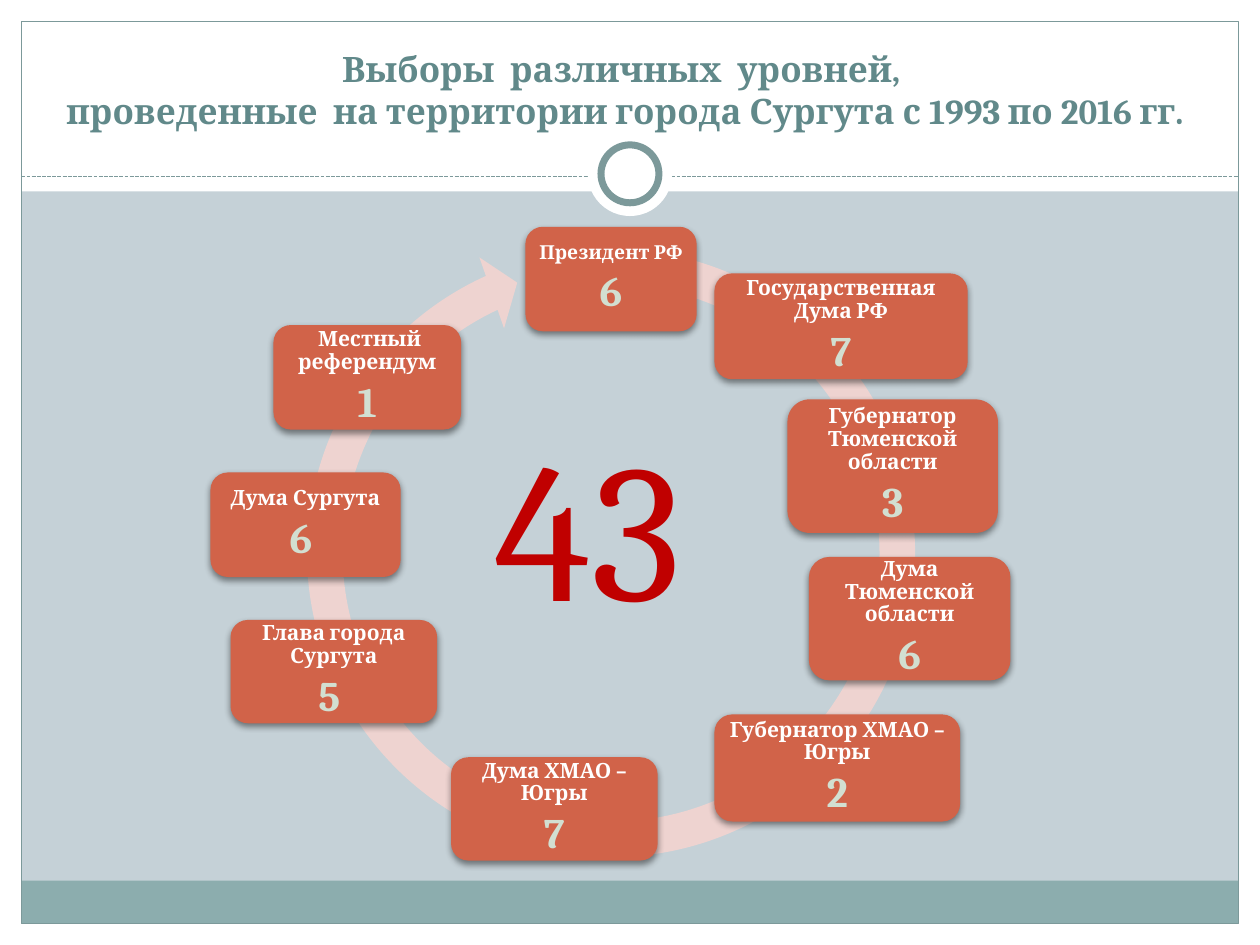
import pptx
import pptx.util
import pptx.dml.color
import pptx.enum.dml
import pptx.enum.shapes
import pptx.enum.text
import pptx.oxml
import pptx.oxml.ns
from lxml import etree

Inches, Pt = pptx.util.Inches, pptx.util.Pt
SHAPES = pptx.enum.shapes.MSO_SHAPE
ALIGN = pptx.enum.text.PP_ALIGN
ANCHOR = pptx.enum.text.MSO_ANCHOR
qn = pptx.oxml.ns.qn

FONT = "Cambria"
COLORS = {
    "background": "C5D1D7", "white": "FFFFFF", "footer": "8CADAE",
    "frame": "7C999A", "title": "61898A", "arrow": "EED3D0",
    "card": "D16349", "count": "D2DFD1", "total": "C00000",
}
WIDTH, HEIGHT, MARGIN = 10, 7.5, 0.17

# label, count, label size, box (left, top, width, height)
CARDS = [
    ("Президент РФ", "6", 11, (4.17, 1.8, 1.36, 0.83)),
    ("Губернатор Тюменской области", "3", 12, (6.25, 3.17, 1.67, 1.06)),
    ("Губернатор ХМАО – Югры", "2", 12, (5.67, 5.67, 1.95, 0.85)),
    ("Глава города Сургута", "5 ", 12, (1.83, 4.92, 1.64, 0.82)),
    ("Государственная Дума РФ", "7", 12, (5.67, 2.17, 2.01, 0.84)),
    ("Дума Тюменской области", "6", 12, (6.42, 4.42, 1.6, 0.98)),
    ("Дума ХМАО – Югры", "7", 12, (3.58, 6.01, 1.64, 0.82)),
    ("Дума Сургута", "6 ", 12, (1.67, 3.75, 1.51, 0.83)),
    (" Местный референдум", "1", 12, (2.17, 2.58, 1.49, 0.83)),
]


def color(name):
    return pptx.dml.color.RGBColor.from_string(COLORS[name])


def add_shape(slide, kind, box, fill=None, line=None, line_width=0.75):
    shape = slide.shapes.add_shape(kind, *map(Inches, box))
    shape.shadow.inherit = False
    if fill:
        shape.fill.solid()
        shape.fill.fore_color.rgb = color(fill)
    else:
        shape.fill.background()
    if line:
        shape.line.color.rgb = color(line)
        shape.line.width = Pt(line_width)
    else:
        shape.line.fill.background()
    return shape


def write(paragraph, text, size, fill, bold=False, align=ALIGN.LEFT,
          line_spacing=None, after_percent=None):
    paragraph.text = text
    paragraph.alignment = align
    paragraph.font.size = Pt(size)
    for run in paragraph.runs:
        run.font.name = FONT
        run.font.size = Pt(size)
        run.font.bold = bold
        run.font.color.rgb = color(fill)
    if line_spacing:
        paragraph.line_spacing = line_spacing
    if after_percent:
        paragraph.space_after = Pt(0)
        spacing = paragraph._p.pPr.find(qn("a:spcAft"))
        spacing.remove(spacing[0])
        etree.SubElement(spacing, qn("a:spcPct"), val=str(after_percent * 1000))


def add_text_box(slide, box, text, anchor=ANCHOR.TOP, **text_format):
    frame = slide.shapes.add_textbox(*map(Inches, box)).text_frame
    frame.word_wrap = True
    frame.vertical_anchor = anchor
    write(frame.paragraphs[0], text, **text_format)


def add_soft_shadow(shape):
    effects = shape._element.spPr.find(qn("a:effectLst"))
    shadow = etree.SubElement(
        effects, qn("a:outerShdw"), blurRad=str(Pt(4)), dist=str(Pt(2)),
        dir="5400000", algn="ctr", rotWithShape="0")
    tone = etree.SubElement(shadow, qn("a:srgbClr"), val="000000")
    etree.SubElement(tone, qn("a:alpha"), val="45000")


def add_frame(slide, width, height):
    header = 1.52
    for box in [(0, height - MARGIN, width, MARGIN), (0, 0, width, header),
                (0, 0, MARGIN, height), (width - MARGIN, 0, MARGIN, height)]:
        add_shape(slide, SHAPES.RECTANGLE, box, "white")
    inner = width - 2 * MARGIN
    add_shape(slide, SHAPES.RECTANGLE, (MARGIN, 6.99, inner, 0.34), "footer")
    add_shape(slide, SHAPES.RECTANGLE,
              (MARGIN, MARGIN, inner, height - 2 * MARGIN), line="frame")

    divider = slide.shapes.add_connector(
        pptx.enum.shapes.MSO_CONNECTOR.STRAIGHT,
        *map(Inches, (MARGIN, 1.4, width - MARGIN, 1.4)))
    divider.line.color.rgb = color("frame")
    divider.line.width = Pt(0.75)
    divider.line.dash_style = pptx.enum.dml.MSO_LINE.SQUARE_DOT
    divider_properties = divider._element.spPr
    etree.SubElement(divider_properties, qn("a:effectLst"))

    for diameter, line in [(0.67, None), (0.46, "frame")]:
        box = (width / 2 - diameter / 2, 1.38 - diameter / 2, diameter, diameter)
        add_shape(slide, SHAPES.OVAL, box, "white", line, 4)


def add_card(slide, box, label, count, label_size):
    card = add_shape(slide, SHAPES.ROUNDED_RECTANGLE, box, "card")
    add_soft_shadow(card)
    frame = card.text_frame
    frame.word_wrap = True
    frame.vertical_anchor = ANCHOR.MIDDLE
    frame.margin_left = frame.margin_right = Inches(0.05)
    frame.margin_top = frame.margin_bottom = Inches(0.05)
    shared = dict(bold=True, align=ALIGN.CENTER, line_spacing=0.9, after_percent=35)
    write(frame.paragraphs[0], label, label_size, "white", **shared)
    write(frame.add_paragraph(), count, 24, "count", **shared)


def add_cycle(slide, box):
    arrow = add_shape(slide, SHAPES.CIRCULAR_ARROW, box, "arrow")
    degree = 0.6  # one degree in adjustment units
    thickness, head_angle, end_angle, start_angle, head_width = (
        0.055, 5.51 * degree, 245.37 * degree, 280.55 * degree, 0.058)
    for index, value in enumerate(
            (thickness, head_angle, end_angle, start_angle, head_width)):
        arrow.adjustments[index] = value
    for label, count, label_size, card_box in CARDS:
        add_card(slide, card_box, label, count, label_size)
    add_text_box(slide, (3.83, 3.17, 2.25, 1.99), "43", size=112, fill="total")


def main():
    presentation = pptx.Presentation()
    presentation.slide_width = Inches(WIDTH)
    presentation.slide_height = Inches(HEIGHT)
    slide = presentation.slides.add_slide(presentation.slide_layouts[6])
    slide.background.fill.solid()
    slide.background.fill.fore_color.rgb = color("background")
    add_frame(slide, WIDTH, HEIGHT)
    add_text_box(
        slide, (MARGIN, MARGIN, 9.58, 0.92),
        "Выборы  различных  уровней, \v"
        "проведенные  на территории города Сургута с 1993 по 2016 гг.",
        anchor=ANCHOR.BOTTOM, size=20, fill="title", bold=True, align=ALIGN.CENTER)
    add_cycle(slide, (2.28, 1.82, 5.14, 5.14))
    presentation.save("out.pptx")


if __name__ == "__main__":
    main()
